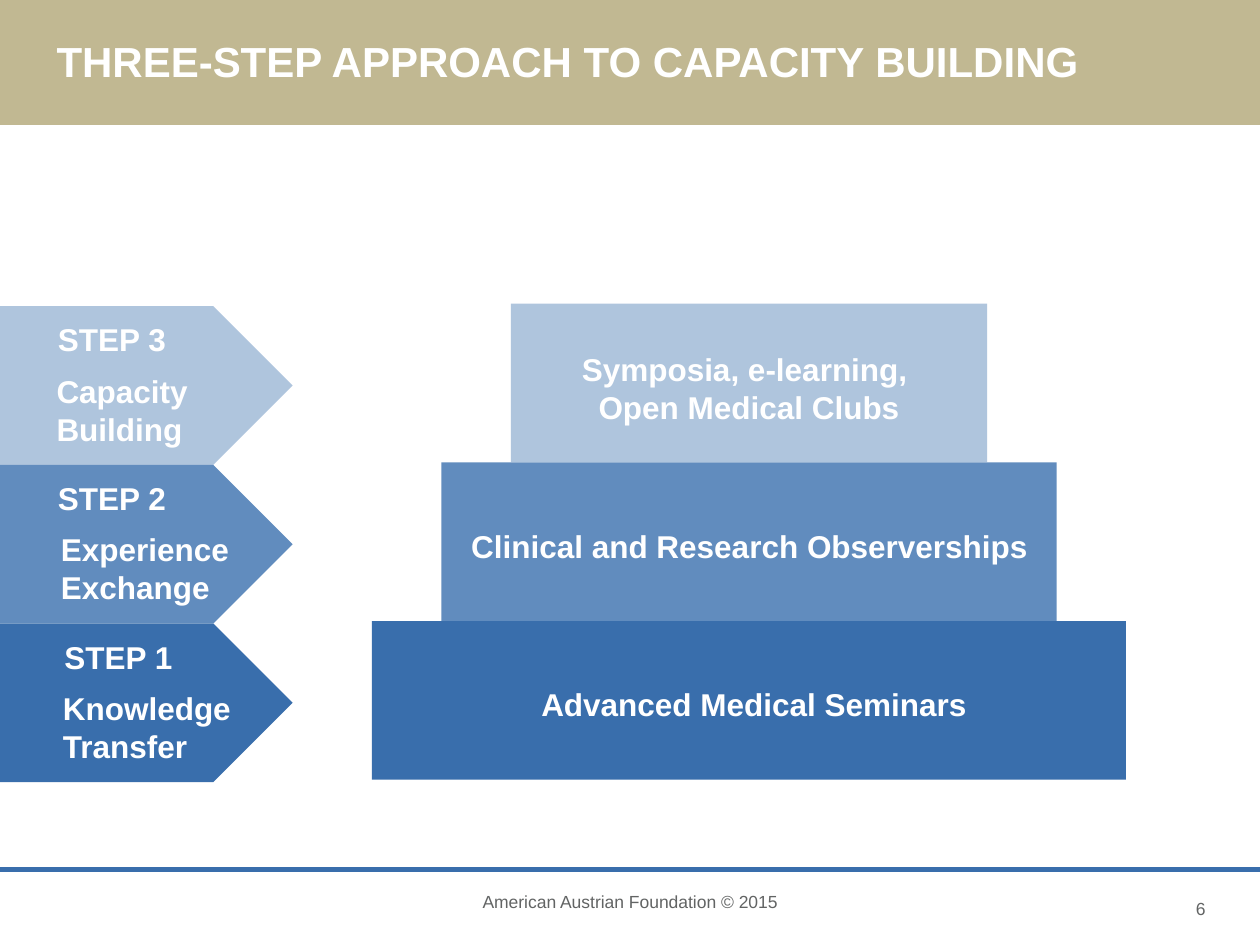
from dataclasses import dataclass

from lxml.etree import SubElement
from pptx import Presentation
from pptx.dml.color import RGBColor
from pptx.enum.shapes import MSO_CONNECTOR, MSO_SHAPE
from pptx.enum.text import MSO_ANCHOR, PP_ALIGN
from pptx.oxml.ns import qn
from pptx.util import Cm, Pt


@dataclass(frozen=True)
class Theme:
    font: str = "Arial"
    band: str = "C1B892"
    blue: str = "396EAC"
    mid_blue: str = "618CBE"
    grey: str = "626464"
    white: str = "FFFFFF"
    title_size: int = 24
    body_size: int = 18
    footer_size: int = 10
    rule_width: float = 3.25


@dataclass(frozen=True)
class Step:
    label: str
    name: str
    label_left: float
    name_left: float
    name_width: float
    content: str
    content_center: float
    content_offset: float
    content_height: float
    color: str
    opacity: int = 100


THEME = Theme()
PAGE_WIDTH, PAGE_HEIGHT = 25.4, 19.05
STEP_HEIGHT = 3.2
PYRAMID_TOP, PYRAMID_CENTER = 6.12, 15.1
TIER_WIDTH, TIER_GROWTH = 9.6, 2.8
ARROW_TOP, ARROW_WIDTH = 6.17, 5.9
LINE_HEIGHT, TWO_LINES = 1.02, 1.8

STEPS = (
    Step("STEP 3", "Capacity\nBuilding", 1.17, 0.89, 3.33,
         "Symposia, e-learning, \nOpen Medical Clubs", 15.1, 0.81, TWO_LINES,
         THEME.blue, 40),
    Step("STEP 2", "Experience\nExchange", 1.17, 0.98, 4.09,
         "Clinical and Research Observerships ", 15.2, 1.17, LINE_HEIGHT,
         THEME.mid_blue),
    Step("STEP 1", "Knowledge\nTransfer", 1.3, 1.02, 4.17,
         "Advanced Medical Seminars", 15.2, 1.17, LINE_HEIGHT, THEME.blue),
)


def add_block(page, kind, left, top, width, height, color, opacity=100):
    """Add a filled preset shape without outline; opacity is in percent."""
    block = page.shapes.add_shape(kind, Cm(left), Cm(top), Cm(width), Cm(height))
    block.shadow.inherit = False
    block.line.fill.background()
    block.fill.solid()
    block.fill.fore_color.rgb = RGBColor.from_string(color)
    if opacity < 100:
        color_node = block.fill._xPr.find(qn("a:solidFill"))[0]
        SubElement(color_node, qn("a:alpha"), val=str(opacity * 1000))
    return block


def add_text(page, text, left, top, width, height, size=THEME.body_size,
             color=THEME.white, bold=True, align=PP_ALIGN.LEFT, wrap=True,
             side_margin=0.25):
    box = page.shapes.add_textbox(Cm(left), Cm(top), Cm(width), Cm(height))
    frame = box.text_frame
    frame.word_wrap = wrap
    frame.margin_left = frame.margin_right = Cm(side_margin)
    frame.text = text
    for para in frame.paragraphs:
        para.alignment = align
        for span in para.runs:
            span.font.name = THEME.font
            span.font.size = Pt(size)
            span.font.bold = bold
            span.font.color.rgb = RGBColor.from_string(color)
    return box


def add_rule(page, top):
    rule = page.shapes.add_connector(
        MSO_CONNECTOR.STRAIGHT, 0, Cm(top), Cm(PAGE_WIDTH), Cm(top))
    rule.line.color.rgb = RGBColor.from_string(THEME.blue)
    rule.line.width = Pt(THEME.rule_width)
    SubElement(rule._element.spPr, qn("a:effectLst"))


def add_header(page):
    add_block(page, MSO_SHAPE.RECTANGLE, 0, -0.07, PAGE_WIDTH, 2.59, THEME.band)
    title = add_text(page, "THREE-STEP APPROACH TO CAPACITY BUILDING",
                     1.14, 0.86, 24.3, 0.9, THEME.title_size, side_margin=0)
    frame = title.text_frame
    frame.margin_top = frame.margin_bottom = 0
    frame.vertical_anchor = MSO_ANCHOR.MIDDLE
    frame.paragraphs[0].line_spacing = 0.85


def add_footer(page):
    add_rule(page, 17.53)
    add_text(page, "American Austrian Foundation © 2015", 0, 17.83, PAGE_WIDTH, 1.27,
             THEME.footer_size, THEME.grey, False, PP_ALIGN.CENTER)
    add_text(page, "6", 19.25, 17.98, 5.3, 1.27,
             THEME.footer_size, THEME.grey, False, PP_ALIGN.RIGHT)


def add_tier(page, step, row):
    """Add one level of the pyramid with its caption."""
    top = PYRAMID_TOP + row * STEP_HEIGHT
    width = TIER_WIDTH + row * TIER_GROWTH
    add_block(page, MSO_SHAPE.RECTANGLE, PYRAMID_CENTER - width / 2, top,
              width, STEP_HEIGHT, step.color, step.opacity)
    text_width = width + 1.4
    add_text(page, step.content, step.content_center - text_width / 2,
             top + step.content_offset, text_width, step.content_height,
             align=PP_ALIGN.CENTER)


def add_arrow(page, step, row):
    """Add the arrow naming one step."""
    top = ARROW_TOP + row * STEP_HEIGHT
    add_block(page, MSO_SHAPE.PENTAGON, 0, top, ARROW_WIDTH, STEP_HEIGHT,
              step.color, step.opacity)
    add_text(page, step.label, step.label_left, top + 0.16, 2.4, LINE_HEIGHT,
             side_margin=0)
    add_text(page, step.name, step.name_left, top + 1.2, step.name_width, TWO_LINES,
             wrap=False)


def main():
    deck = Presentation()
    deck.slide_width, deck.slide_height = Cm(PAGE_WIDTH), Cm(PAGE_HEIGHT)
    page = deck.slides.add_slide(deck.slide_layouts[6])
    add_header(page)
    for row, step in enumerate(STEPS):
        add_tier(page, step, row)
        add_arrow(page, step, row)
    add_footer(page)
    deck.save("out.pptx")


if __name__ == "__main__":
    main()
